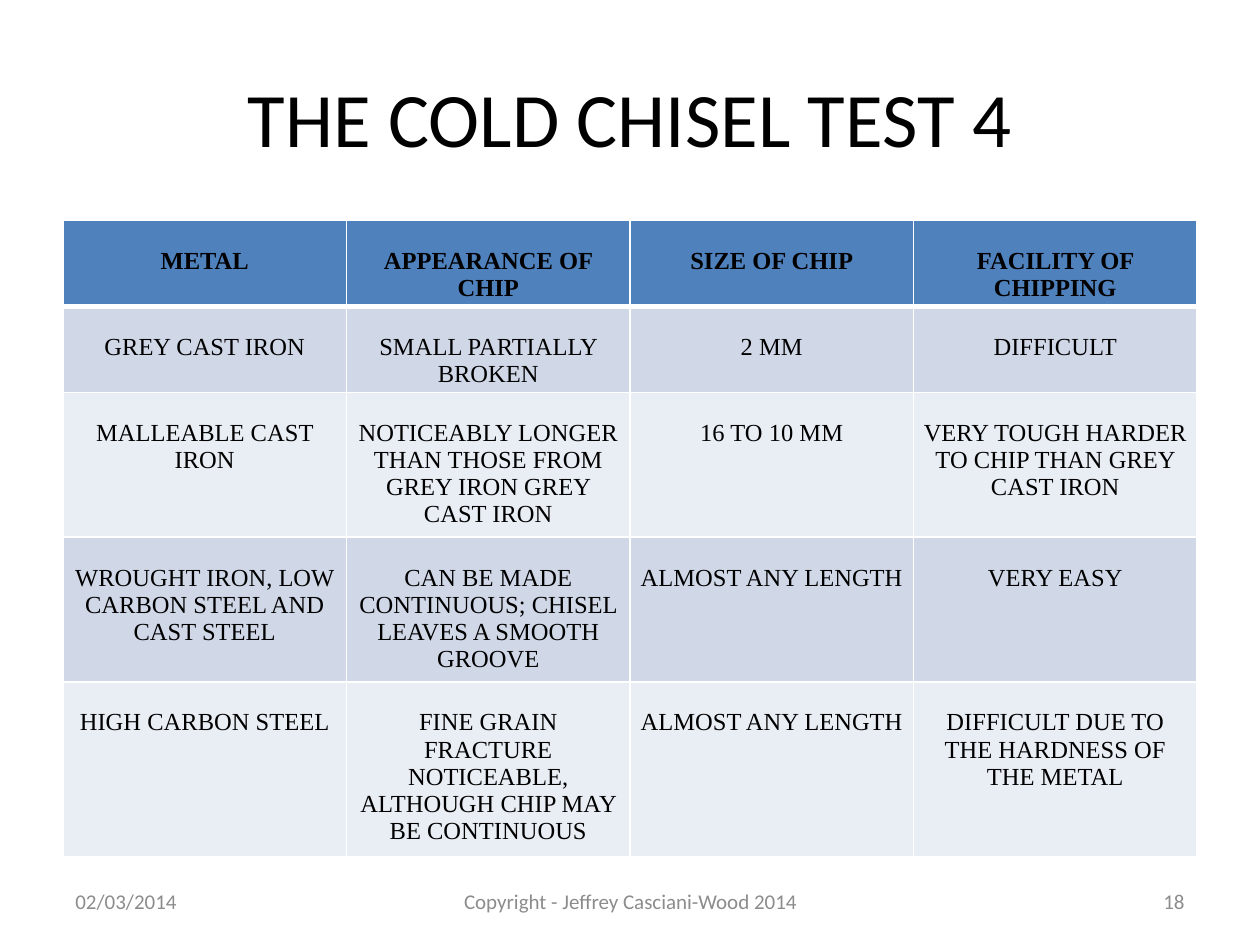
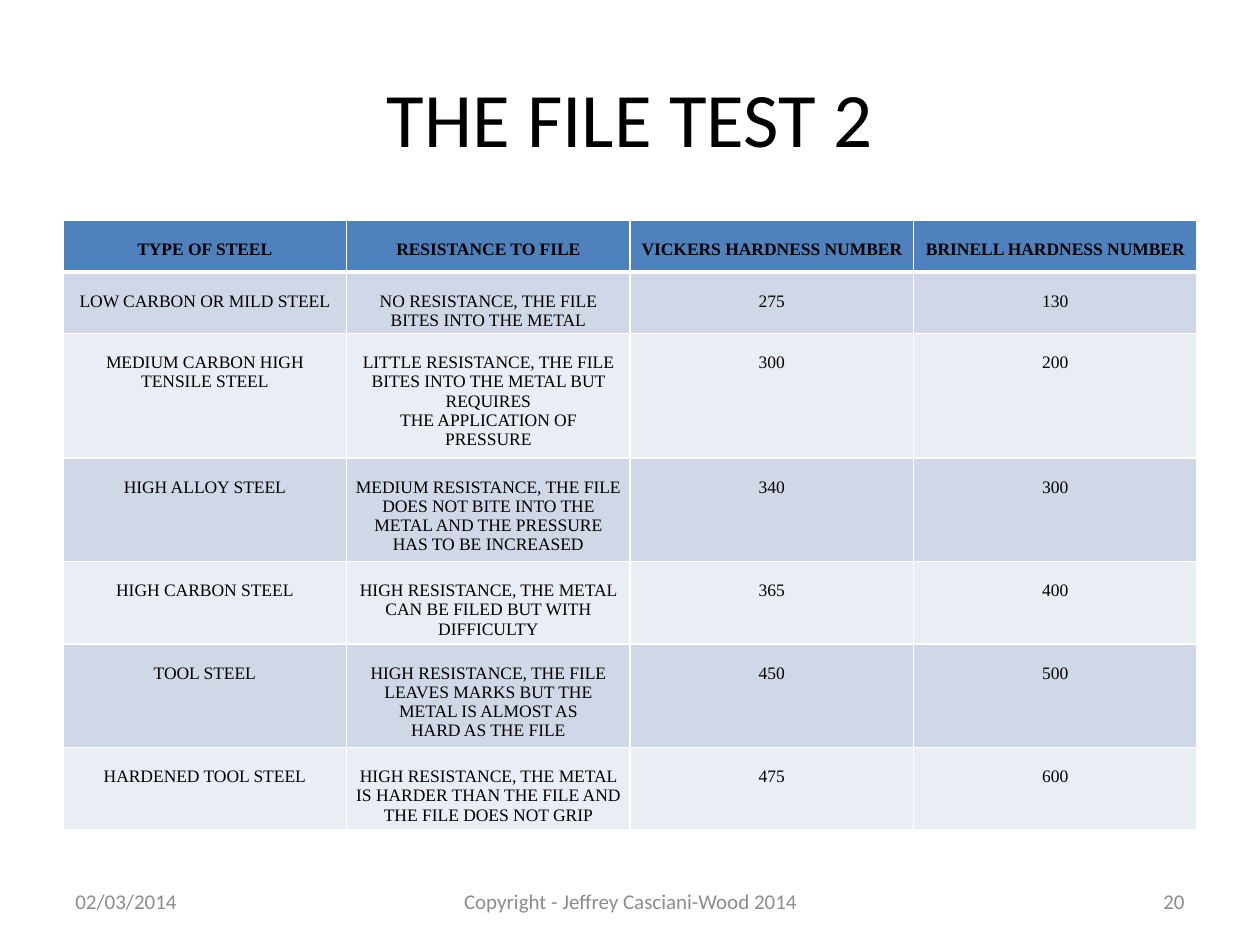
"""Build two slides with tables of workshop tests for metals."""
from dataclasses import dataclass

from lxml import etree
from pptx import Presentation
from pptx import util as u
from pptx.dml.color import RGBColor
from pptx.enum import text as t
from pptx.oxml import ns


@dataclass(frozen=True)
class Theme:
    ink: str = "000000"
    grey: str = "8C8C8C"
    head: str = "4F81BD"
    bands: tuple = ("E9EDF4", "D0D8E8")
    rule: str = "FFFFFF"
    sans: str = "Calibri"
    serif: str = "Times New Roman"
    title: int = 44
    foot: int = 12
    line: float = 1.107


look = Theme()
unit = u.Inches(0.5)
left, wide = 1, 18
mid, low, high = t.PP_ALIGN.CENTER, t.PP_ALIGN.LEFT, t.PP_ALIGN.RIGHT


def style(frame, font, size, tint, side, bold=False):
    for para in frame.paragraphs:
        para.alignment = side
        for run in para.runs:
            run.font.name = font
            run.font.size = u.Pt(size)
            run.font.bold = bold
            run.font.color.rgb = RGBColor.from_string(tint)


def label(slide, words, spot, size, tint, side):
    box = slide.shapes.add_textbox(*(int(n * unit) for n in spot))
    frame = box.text_frame
    frame.word_wrap = True
    frame.vertical_anchor = t.MSO_ANCHOR.MIDDLE
    frame.text = words
    style(frame, look.sans, size, tint, side)


pages = [
    ("THE COLD CHISEL TEST 4", "18", 14, 10.26, [
        ("METAL", "APPEARANCE OF CHIP", "SIZE OF CHIP", "FACILITY OF CHIPPING"),
        ("GREY CAST IRON", "SMALL PARTIALLY BROKEN", "2 MM", "DIFFICULT"),
        ("MALLEABLE CAST IRON",
         "NOTICEABLY LONGER THAN THOSE FROM GREY IRON GREY CAST IRON",
         "16 TO 10 MM", "VERY TOUGH HARDER TO CHIP THAN GREY CAST IRON"),
        ("WROUGHT IRON, LOW CARBON STEEL AND CAST STEEL",
         "CAN BE MADE CONTINUOUS; CHISEL LEAVES A SMOOTH GROOVE",
         "ALMOST ANY LENGTH", "VERY EASY"),
        ("HIGH CARBON STEEL",
         "FINE GRAIN FRACTURE NOTICEABLE, ALTHOUGH CHIP MAY BE CONTINUOUS",
         "ALMOST ANY LENGTH", "DIFFICULT DUE TO THE HARDNESS OF THE METAL"),
    ]),
    ("THE FILE TEST 2", "20", 10, 9.82, [
        ("TYPE OF STEEL", "RESISTANCE TO FILE",
         "VICKERS HARDNESS NUMBER", "BRINELL HARDNESS NUMBER"),
        ("LOW CARBON OR MILD STEEL",
         "NO RESISTANCE, THE FILE BITES INTO THE METAL", "275", "130"),
        ("MEDIUM CARBON HIGH TENSILE STEEL",
         "LITTLE RESISTANCE, THE FILE BITES INTO THE METAL BUT REQUIRES\n"
         "THE APPLICATION OF PRESSURE", "300", "200"),
        ("HIGH ALLOY STEEL",
         "MEDIUM RESISTANCE, THE FILE DOES NOT BITE INTO THE METAL "
         "AND THE PRESSURE HAS TO BE INCREASED", "340", "300"),
        ("HIGH CARBON STEEL",
         "HIGH RESISTANCE, THE METAL CAN BE FILED BUT WITH DIFFICULTY",
         "365", "400"),
        ("TOOL STEEL",
         "HIGH RESISTANCE, THE FILE LEAVES MARKS BUT THE METAL IS ALMOST AS\n"
         "HARD AS THE FILE", "450", "500"),
        ("HARDENED TOOL STEEL",
         "HIGH RESISTANCE, THE METAL IS HARDER THAN THE FILE "
         "AND THE FILE DOES NOT GRIP", "475", "600"),
    ]),
]

deck = Presentation()
deck.slide_width, deck.slide_height = 20 * unit, 15 * unit

for title, page, size, tall, data in pages:
    slide = deck.slides.add_slide(deck.slide_layouts[6])
    label(slide, title, (left, 0.6, wide, 2.5), look.title, look.ink, mid)

    grid = slide.shapes.add_table(
        len(data), len(data[0]), left * unit, int(3.5 * unit),
        wide * unit, int(tall * unit))
    for row, words in enumerate(data):
        grid.table.rows[row].height = u.Inches(0.41)
        fill = look.bands[row % 2] if row else look.head
        edges = {"L": 1, "R": 1, "T": 3 if row == 1 else 1, "B": 1 if row else 3}
        for col, word in enumerate(words):
            cell = grid.table.cell(row, col)
            cell.text = word
            cell.margin_left = cell.margin_right = u.Inches(0.07)
            cell.margin_top = u.Pt(size * look.line)
            cell.margin_bottom = 0
            style(cell.text_frame, look.serif, size, look.ink, mid, row == 0)
            cell.fill.solid()
            cell.fill.fore_color.rgb = RGBColor.from_string(fill)
            props = cell._tc.get_or_add_tcPr()
            for place, (edge, width) in enumerate(edges.items()):
                line = etree.Element(ns.qn(f"a:ln{edge}"), w=str(u.Pt(width)))
                solid = etree.SubElement(line, ns.qn("a:solidFill"))
                etree.SubElement(solid, ns.qn("a:srgbClr"), val=look.rule)
                props.insert(place, line)
    grid.height = int(tall * unit)

    feet = [("Copyright - Jeffrey Casciani-Wood 2014", 6.84, 6.34, mid),
            ("02/03/2014", left, 4.66, low),
            (page, 14.34, 4.66, high)]
    for word, start, span, side in feet:
        label(slide, word, (start, 13.9, span, 0.8), look.foot, look.grey, side)

deck.save("out.pptx")
